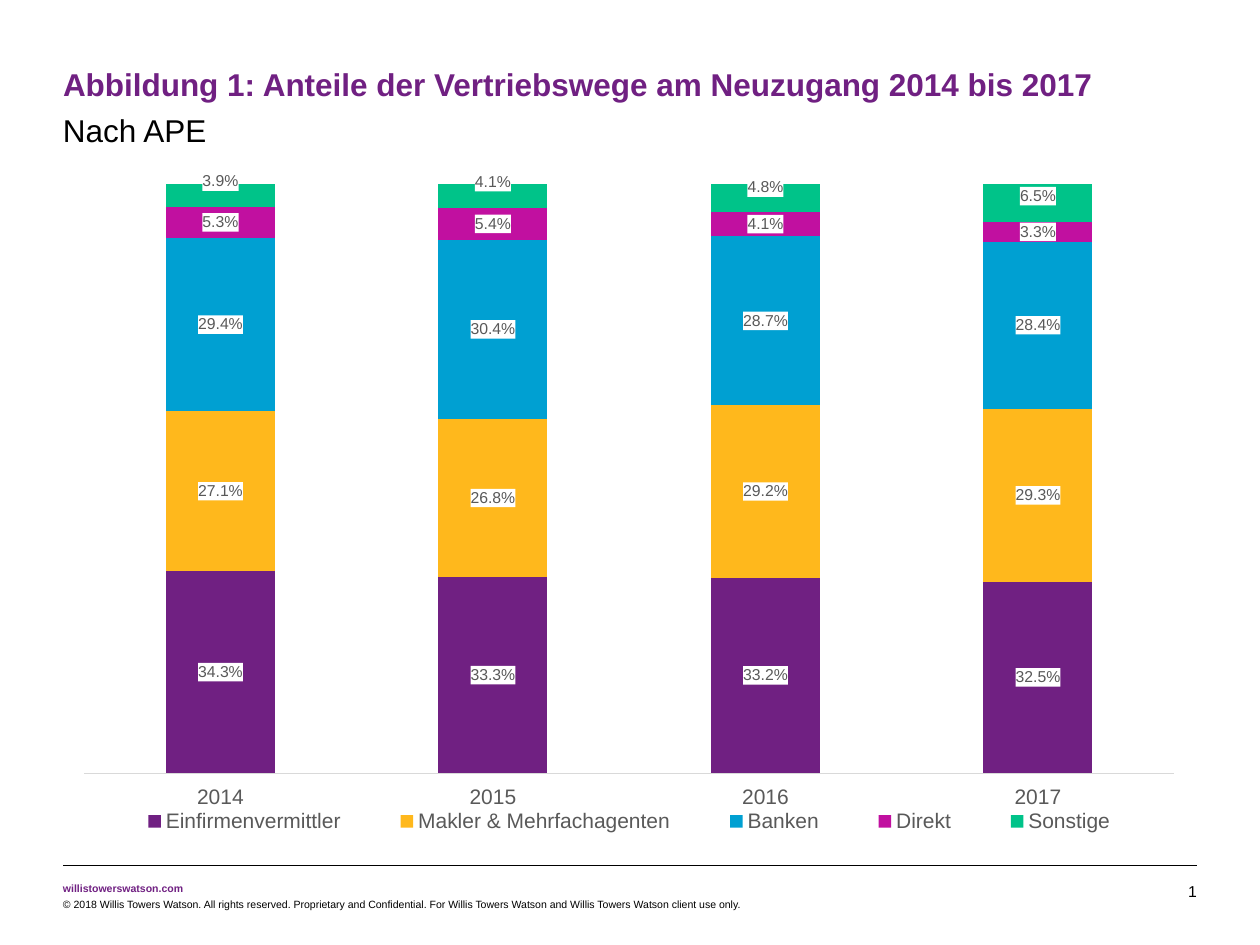
from copy import deepcopy

from lxml.etree import SubElement
from pptx import Presentation
from pptx.chart.data import CategoryChartData
from pptx.dml.color import RGBColor
from pptx.enum.chart import XL_CHART_TYPE, XL_LEGEND_POSITION, XL_TICK_LABEL_POSITION, XL_TICK_MARK
from pptx.enum.shapes import MSO_CONNECTOR
from pptx.enum.text import MSO_ANCHOR, MSO_AUTO_SIZE, PP_ALIGN
from pptx.oxml import parse_xml
from pptx.oxml.ns import nsdecls, qn
from pptx.util import Cm, Pt

YEARS = ["2014", "2015", "2016", "2017"]
SERIES = [
    ("Einfirmenvermittler", "702082", [0.343, 0.333, 0.332, 0.325]),
    ("Makler & Mehrfachagenten", "FFB81C", [0.271, 0.268, 0.292, 0.293]),
    ("Banken", "00A0D2", [0.294, 0.304, 0.287, 0.284]),
    ("Direkt", "C110A0", [0.053, 0.054, 0.041, 0.033]),
    ("Sonstige", "00C389", [0.039, 0.041, 0.048, 0.065]),
]
LIFTS = [-0.02, -0.02, -0.015, -0.01]
LEFT, WIDTH = 1.27, 22.86


def color(code):
    return RGBColor.from_string(code)


def layout(target=None, **parts):
    """Return a manual chart layout in fractions of the chart size."""
    root = parse_xml(f"<c:layout {nsdecls('c')}/>")
    manual = SubElement(root, qn("c:manualLayout"))
    tags = {"layoutTarget": target} if target else {}
    if "w" in parts:
        tags.update(xMode="edge", yMode="edge")
    tags.update(parts)
    for tag, val in tags.items():
        SubElement(manual, qn(f"c:{tag}")).set("val", str(val))
    return root


def write(frame, text, size=18, ink="000000", bold=False,
          align=PP_ALIGN.LEFT, anchor=MSO_ANCHOR.TOP, wrap=True):
    frame.margin_left = frame.margin_right = 0
    frame.margin_top = frame.margin_bottom = 0
    frame.auto_size = MSO_AUTO_SIZE.NONE
    frame.word_wrap = wrap
    frame.vertical_anchor = anchor
    frame.text = text
    para = frame.paragraphs[0]
    para.alignment = align
    style(para.font, size, ink, bold)


def style(font, size, ink, bold=False):
    font.name = "Arial"
    font.size = Pt(size)
    font.bold = bold
    font.color.rgb = color(ink)


class Page:
    accent, gray, rule = "702082", "595959", "D9D9D9"

    def __init__(self, deck):
        self.slide = deck.slides.add_slide(deck.slide_layouts[5])

    def title(self, text, x, y, w, h):
        box = self.slide.shapes.title
        box.left, box.top, box.width, box.height = Cm(x), Cm(y), Cm(w), Cm(h)
        write(box.text_frame, text, ink=self.accent, bold=True, anchor=MSO_ANCHOR.MIDDLE)

    def text(self, text, x, y, w, h, **form):
        box = self.slide.shapes.add_textbox(Cm(x), Cm(y), Cm(w), Cm(h))
        write(box.text_frame, text, **form)

    def line(self, x, y, w):
        line = self.slide.shapes.add_connector(
            MSO_CONNECTOR.STRAIGHT, Cm(x), Cm(y), Cm(x + w), Cm(y))
        line.line.color.rgb = color("000000")
        line.line.width = Pt(0.25)
        SubElement(line._element.spPr, qn("a:effectLst"))

    def chart(self, x, y, w, h):
        data = CategoryChartData(number_format="0.0%")
        data.categories = YEARS
        for name, _, vals in SERIES:
            data.add_series(name, vals)
        chart = self.slide.shapes.add_chart(
            XL_CHART_TYPE.COLUMN_STACKED_100, Cm(x), Cm(y), Cm(w), Cm(h), data).chart
        style(chart.font, 10, "000000")
        chart.has_title = False
        plot = chart.plots[0]
        plot.gap_width, plot.overlap = 150, 100
        plot.vary_by_categories = False
        for series, (_, fill, _) in zip(plot.series, SERIES):
            series.format.fill.solid()
            series.format.fill.fore_color.rgb = color(fill)
            self.labels(series)
        self.lift(plot.series[-1])
        self.axes(chart)
        self.legend(chart)
        area = chart._chartSpace.chart.plotArea
        for old in area.findall(qn("c:layout")):
            area.remove(old)
        area.insert(0, layout("inner", x=0.02, y=0.02, w=0.96, h=0.86))

    def labels(self, series):
        """Show values on white plates."""
        labels = series.data_labels
        labels.show_value = True
        labels.number_format = "0.0%"
        labels.number_format_is_linked = False
        style(labels.font, 9, self.gray)
        root = series._element.find(qn("c:dLbls"))
        for lead in root.findall(qn("c:showLeaderLines")):
            root.remove(lead)
        root.find(qn("c:numFmt")).addnext(parse_xml(
            f'<c:spPr {nsdecls("c", "a")}><a:solidFill><a:srgbClr val="FFFFFF"/>'
            "</a:solidFill></c:spPr>"))

    def lift(self, series):
        """Move each label of the top series upwards."""
        root = series._element.find(qn("c:dLbls"))
        base = list(root)
        for idx, rise in enumerate(LIFTS):
            label = parse_xml(f'<c:dLbl {nsdecls("c")}><c:idx val="{idx}"/></c:dLbl>')
            label.append(layout(x=0, y=rise))
            label.extend(deepcopy(base))
            root.insert(idx, label)

    def axes(self, chart):
        values = chart.value_axis
        values.visible = False
        values.has_major_gridlines = False
        values.minimum_scale, values.maximum_scale = 0, 1
        years = chart.category_axis
        years.major_tick_mark = years.minor_tick_mark = XL_TICK_MARK.NONE
        years.tick_label_position = XL_TICK_LABEL_POSITION.LOW
        years.format.line.color.rgb = color(self.rule)
        years.format.line.width = Pt(0.75)
        style(years.tick_labels.font, 12, self.gray)

    def legend(self, chart):
        chart.has_legend = True
        legend = chart.legend
        legend.position = XL_LEGEND_POSITION.BOTTOM
        legend.include_in_layout = False
        style(legend.font, 12, self.gray)
        root = legend._element
        for old in root.findall(qn("c:layout")):
            root.remove(old)
        root.find(qn("c:legendPos")).addnext(layout(x=0.03, y=0.92, w=0.94, h=0.06))


def main():
    deck = Presentation()
    deck.slide_width, deck.slide_height = Cm(25.4), Cm(19.05)
    page = Page(deck)
    page.title("Abbildung 1: Anteile der Vertriebswege am Neuzugang 2014 bis 2017",
               LEFT, 1.27, WIDTH, 0.86)
    page.text("Nach APE", LEFT, 2.24, WIDTH, 0.76, anchor=MSO_ANCHOR.MIDDLE)
    page.chart(1.24, 3.43, 22.89, 13.82)
    page.line(LEFT, 17.45, WIDTH)
    page.text("willistowerswatson.com", LEFT, 17.78, 2.44, 0.25,
              size=6, ink=page.accent, bold=True, wrap=False)
    page.text("© 2018 Willis Towers Watson. All rights reserved. Proprietary and Confidential. "
              "For Willis Towers Watson and Willis Towers Watson client use only.",
              LEFT, 18.1, 14.66, 0.25, size=6)
    page.text("1", 23.06, 17.78, 1.07, 0.38, size=9,
              align=PP_ALIGN.RIGHT, anchor=MSO_ANCHOR.BOTTOM)
    deck.save("out.pptx")


if __name__ == "__main__":
    main()
